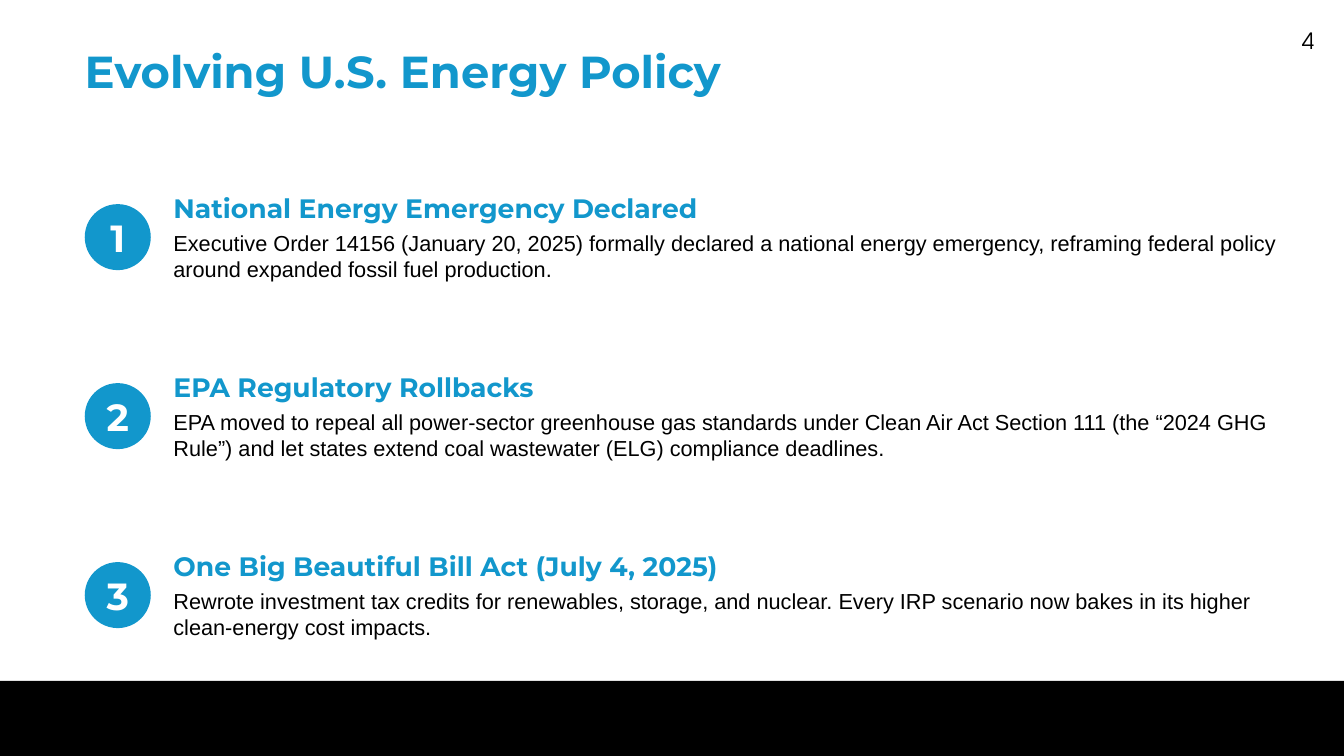
from dataclasses import dataclass

from pptx import Presentation
from pptx.dml.color import RGBColor
from pptx.enum import shapes, text
from pptx.util import Pt

BLUE = RGBColor(0x12, 0x97, 0xCC)
BLACK = RGBColor(0, 0, 0)
WHITE = RGBColor(255, 255, 255)

SLIDE_WIDTH, SLIDE_HEIGHT = 1919.52, 1080
MARGIN = 121
BADGE_SIZE = 94.3
FIRST_BADGE_TOP = 291.6
ROW_PITCH = 255.7
BODY_LEFT, BODY_WIDTH, BODY_HEIGHT = 247.7, 1579, 236.2


@dataclass(frozen=True)
class Policy:
    heading: str
    detail: str


@dataclass(frozen=True)
class Style:
    font: str
    size: float
    color: RGBColor
    bold: bool = False


TITLE = Style("Montserrat", 64, BLUE, True)
NUMBER = Style("Montserrat", 54, WHITE, True)
HEADING = Style("Montserrat", 38, BLUE, True)
DETAIL = Style("Arial", 31, BLACK)
PAGE = Style("TeX Gyre Adventor", 32, BLACK)

POLICIES = [
    Policy(
        "National Energy Emergency Declared",
        "Executive Order 14156 (January 20, 2025) formally declared a national energy "
        "emergency, reframing federal policy around expanded fossil fuel production.",
    ),
    Policy(
        "EPA Regulatory Rollbacks",
        "EPA moved to repeal all power-sector greenhouse gas standards under Clean Air Act "
        "Section 111 (the “2024 GHG Rule”) and let states extend coal wastewater (ELG) "
        "compliance deadlines.",
    ),
    Policy(
        "One Big Beautiful Bill Act (July 4, 2025)",
        "Rewrote investment tax credits for renewables, storage, and nuclear. Every IRP "
        "scenario now bakes in its higher clean-energy cost impacts.",
    ),
]


def add_run(paragraph, words: str, style: Style) -> None:
    run = paragraph.add_run()
    run.text = words
    run.font.name = style.font
    run.font.size = Pt(style.size)
    run.font.bold = style.bold
    run.font.color.rgb = style.color


def set_frame(frame, anchor, inset_x: float = 0, inset_y: float = 0) -> None:
    frame.word_wrap = True
    frame.vertical_anchor = anchor
    frame.margin_left = frame.margin_right = Pt(inset_x)
    frame.margin_top = frame.margin_bottom = Pt(inset_y)


def add_filled(slide, kind, left: float, top: float, width: float, height: float,
               color: RGBColor):
    shape = slide.shapes.add_shape(kind, Pt(left), Pt(top), Pt(width), Pt(height))
    shape.shadow.inherit = False
    shape.fill.solid()
    shape.fill.fore_color.rgb = color
    shape.line.fill.background()
    return shape


def add_text_frame(slide, left: float, top: float, width: float, height: float):
    return slide.shapes.add_textbox(Pt(left), Pt(top), Pt(width), Pt(height)).text_frame


def add_policy(slide, index: int, policy: Policy) -> None:
    """Draw a numbered badge with the policy text centred beside it."""
    badge_top = FIRST_BADGE_TOP + index * ROW_PITCH
    badge = add_filled(slide, shapes.MSO_SHAPE.OVAL, MARGIN, badge_top,
                       BADGE_SIZE, BADGE_SIZE, BLUE).text_frame
    set_frame(badge, text.MSO_ANCHOR.MIDDLE)
    badge.paragraphs[0].alignment = text.PP_ALIGN.CENTER
    add_run(badge.paragraphs[0], str(index + 1), NUMBER)

    body_top = badge_top + (BADGE_SIZE - BODY_HEIGHT) / 2
    body = add_text_frame(slide, BODY_LEFT, body_top, BODY_WIDTH, BODY_HEIGHT)
    set_frame(body, text.MSO_ANCHOR.MIDDLE)
    heading = body.paragraphs[0]
    heading.space_after = Pt(7)
    add_run(heading, policy.heading, HEADING)
    detail = body.add_paragraph()
    detail.line_spacing = 1.02
    add_run(detail, policy.detail, DETAIL)


def main() -> None:
    deck = Presentation()
    deck.slide_width, deck.slide_height = Pt(SLIDE_WIDTH), Pt(SLIDE_HEIGHT)
    slide = deck.slides.add_slide(deck.slide_layouts[6])
    slide.background.fill.solid()
    slide.background.fill.fore_color.rgb = WHITE

    page = add_text_frame(slide, 1767.6, 31, 123.8, 53.3)
    set_frame(page, text.MSO_ANCHOR.TOP, 14.4, 7.2)
    page.paragraphs[0].alignment = text.PP_ALIGN.RIGHT
    add_run(page.paragraphs[0], "4", PAGE)

    add_filled(slide, shapes.MSO_SHAPE.RECTANGLE, -10, 972.7, 1936, 123.8, BLACK)

    title = add_text_frame(slide, MARGIN, 62.6, 1676.9, 110.2)
    set_frame(title, text.MSO_ANCHOR.TOP)
    add_run(title.paragraphs[0], "Evolving U.S. Energy Policy", TITLE)

    for index, policy in enumerate(POLICIES):
        add_policy(slide, index, policy)

    deck.save("out.pptx")


if __name__ == "__main__":
    main()
